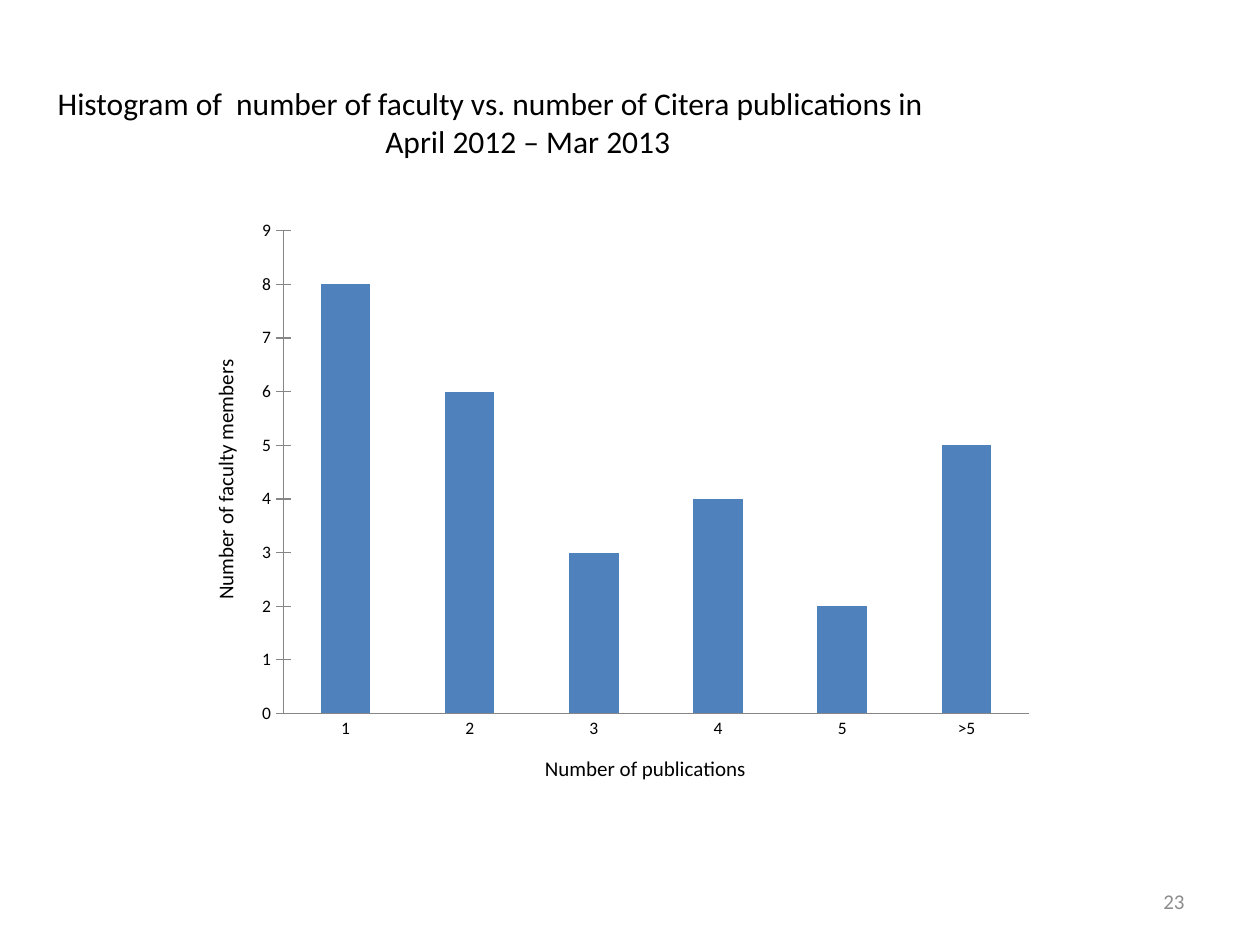
from lxml.etree import SubElement
from pptx import Presentation
from pptx.chart.data import CategoryChartData
from pptx.dml.color import RGBColor
from pptx.enum.chart import XL_CHART_TYPE as CT, XL_TICK_MARK as TICK
from pptx.enum.text import MSO_ANCHOR as ANCHOR, PP_ALIGN as ALIGN
from pptx.oxml.ns import qn
from pptx.util import Inches, Pt

FONT = "Calibri"
BLACK, GRAY, BLUE, AXIS = "000000", "8C8C8C", "4F81BD", "868686"

# Each line: text, left indent in inches
HEADING = [
    ("Histogram of  number of faculty vs. number of Citera publications in", 0),
    ("April 2012 – Mar 2013", 2.6),
]
PAGE = [("23", 0)]
FACULTY_BY_PUBLICATIONS = {"1": 8, "2": 6, "3": 3, "4": 4, "5": 2, ">5": 5}
PLOT_AREA = {"x": 0.11, "y": 0.04, "w": 0.87, "h": 0.8}  # fractions of the chart


def rgb(value):
    return RGBColor.from_string(value)


def style(font, size, color=BLACK):
    for name, value in {"name": FONT, "size": Pt(size), "bold": False}.items():
        setattr(font, name, value)
    font.color.rgb = rgb(color)


def add_text(slide, box, lines, size, color, align, anchor):
    tf = slide.shapes.add_textbox(*map(Inches, box)).text_frame
    tf.word_wrap, tf.vertical_anchor = True, anchor
    for i, (text, indent) in enumerate(lines):
        p = tf.paragraphs[0] if i == 0 else tf.add_paragraph()
        p.alignment = align
        if indent:
            p._p.get_or_add_pPr().set("marL", str(Inches(indent)))
        r = p.add_run()
        r.text = text
        style(r.font, size, color)


def format_axis(axis, title, tick):
    axis.has_major_gridlines = False
    axis.major_tick_mark, axis.minor_tick_mark = tick, TICK.NONE
    axis.format.line.color.rgb = rgb(AXIS)
    style(axis.tick_labels.font, 10)
    tf = axis.axis_title.text_frame
    tf.text = title
    style(tf.paragraphs[0].runs[0].font, 12)


def set_plot_area(chart, fractions):
    """Fix the inner plot area inside the chart frame."""
    plot_area = chart._chartSpace.chart.plotArea
    layout = plot_area.find(qn("c:layout"))
    if layout is None:
        layout = SubElement(plot_area, qn("c:layout"))
        plot_area.insert(0, layout)
    manual = SubElement(layout, qn("c:manualLayout"))
    values = {"layoutTarget": "inner", "xMode": "edge", "yMode": "edge", **fractions}
    for name, value in values.items():
        SubElement(manual, qn(f"c:{name}")).set("val", str(value))


def add_histogram(slide, box):
    data = CategoryChartData()
    data.categories = list(FACULTY_BY_PUBLICATIONS)
    data.add_series("Series 1", FACULTY_BY_PUBLICATIONS.values())
    chart = slide.shapes.add_chart(CT.COLUMN_CLUSTERED, *map(Inches, box), data).chart
    chart.has_legend = chart.has_title = False
    style(chart.font, 10)
    format_axis(chart.category_axis, "Number of publications", TICK.NONE)
    format_axis(chart.value_axis, "Number of faculty members", TICK.CROSS)
    scale = {"minimum_scale": 0, "maximum_scale": 9, "major_unit": 1}
    for name, value in scale.items():
        setattr(chart.value_axis, name, value)
    plot = chart.plots[0]
    plot.gap_width, plot.vary_by_categories = 150, False
    fill = plot.series[0].format.fill
    fill.solid()
    fill.fore_color.rgb = rgb(BLUE)
    set_plot_area(chart, PLOT_AREA)


def main():
    prs = Presentation()
    prs.slide_width, prs.slide_height = Inches(10), Inches(7.5)
    slide = prs.slides.add_slide(prs.slide_layouts[6])
    add_text(slide, (0.36, 0.62, 9.14, 0.71), HEADING, 18, BLACK, ALIGN.LEFT, ANCHOR.TOP)
    add_text(slide, (7.17, 6.95, 2.33, 0.4), PAGE, 12, GRAY, ALIGN.RIGHT, ANCHOR.MIDDLE)
    add_histogram(slide, (1.5, 1.64, 6.8, 4.79))
    prs.save("out.pptx")


if __name__ == "__main__":
    main()
